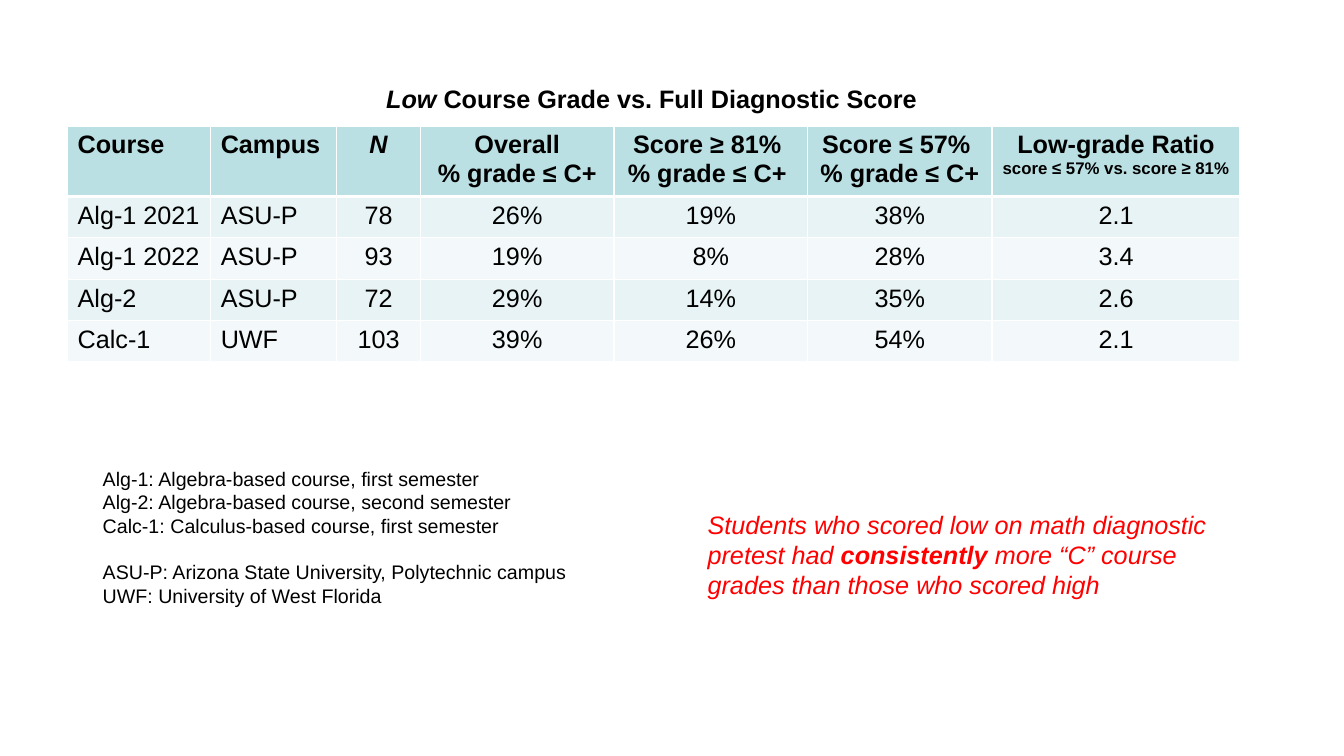
from dataclasses import dataclass

from lxml import etree
from pptx import Presentation
from pptx import util as u
from pptx.dml.color import RGBColor
from pptx.enum import text
from pptx.oxml import ns

FONT = "Arial"
BLACK = RGBColor(0x00, 0x00, 0x00)
RED = RGBColor(0xFF, 0x00, 0x00)
WHITE = RGBColor(0xFF, 0xFF, 0xFF)
HEADER_FILL = RGBColor(0xBB, 0xE0, 0xE3)
BAND_FILLS = (RGBColor(0xE7, 0xF3, 0xF4), RGBColor(0xF3, 0xF9, 0xFA))
LEFT, CENTER = text.PP_ALIGN.LEFT, text.PP_ALIGN.CENTER


@dataclass(frozen=True)
class Run:
    text: str
    bold: bool = False
    italic: bool = False
    size: float = 18


@dataclass(frozen=True)
class Column:
    header: tuple[tuple[Run, ...], ...]
    width: float
    values: tuple[str, ...]
    align: text.PP_ALIGN = CENTER


def heading(*lines: str) -> tuple[tuple[Run, ...], ...]:
    return tuple((Run(line, bold=True),) for line in lines)


COLUMNS = (
    Column(heading("Course"), 1.42, ("Alg-1 2021", "Alg-1 2022", "Alg-2", "Calc-1"), LEFT),
    Column(heading("Campus"), 1.25, ("ASU-P", "ASU-P", "ASU-P", "UWF"), LEFT),
    Column(((Run("N", bold=True, italic=True),),), 0.83, ("78", "93", "72", "103")),
    Column(heading("Overall", "% grade ≤ C+"), 1.92, ("26%", "19%", "29%", "39%")),
    Column(heading("Score ≥ 81% ", "% grade ≤ C+ "), 1.92, ("19%", "8%", "14%", "26%")),
    Column(heading("Score ≤ 57% ", "% grade ≤ C+"), 1.83, ("38%", "28%", "35%", "54%")),
    Column(
        ((Run("Low-grade Ratio", bold=True),
          Run(" score ≤ 57% vs. score ≥ 81%", bold=True, size=12)),),
        2.46, ("2.1", "3.4", "2.6", "2.1")),
)
COURSES = (
    "Alg-1: Algebra-based course, first semester",
    "Alg-2: Algebra-based course, second semester",
    "Calc-1: Calculus-based course, first semester",
)
CAMPUSES = (
    "ASU-P: Arizona State University, Polytechnic campus",
    "UWF: University of West Florida",
)
FINDING = (
    Run("Students who scored low on math diagnostic pretest had ", italic=True),
    Run("consistently", bold=True, italic=True),
    Run(" more “C” course grades than those who scored high", italic=True),
)


def write(tf, lines, *, color: RGBColor = BLACK, align: text.PP_ALIGN = LEFT) -> None:
    """Fill a text frame with one paragraph for each line of runs."""
    tf.word_wrap = True
    for i, line in enumerate(lines):
        p = tf.add_paragraph() if i else tf.paragraphs[0]
        p.alignment = align
        for run in line:
            r = p.add_run()
            r.text = run.text
            r.font.name, r.font.size = FONT, u.Pt(run.size)
            r.font.bold, r.font.italic = run.bold, run.italic
            r.font.color.rgb = color


def add_text(s, left: float, top: float, width: float, height: float, lines, **fmt):
    box = s.shapes.add_textbox(*map(u.Inches, (left, top, width, height)))
    write(box.text_frame, lines, **fmt)
    return box.text_frame


def set_borders(cell, bottom: float) -> None:
    """Draw white cell borders, 1 pt wide except for the bottom one."""
    tc_pr = cell._tc.get_or_add_tcPr()
    for side, width in (("L", 1), ("R", 1), ("T", 1), ("B", bottom)):
        ln = etree.SubElement(tc_pr, ns.qn(f"a:ln{side}"), w=str(u.Pt(width)))
        fill = etree.SubElement(ln, ns.qn("a:solidFill"))
        etree.SubElement(fill, ns.qn("a:srgbClr"), val=str(WHITE))


def format_cell(cell, lines, fill: RGBColor, align: text.PP_ALIGN, bottom: float = 1) -> None:
    set_borders(cell, bottom)
    cell.fill.solid()
    cell.fill.fore_color.rgb = fill
    write(cell.text_frame, lines, align=align)


def add_grade_table(s) -> None:
    heights = (0.7,) + (0.41,) * len(COLUMNS[0].values)
    width = sum(c.width for c in COLUMNS)
    table = s.shapes.add_table(
        len(heights), len(COLUMNS),
        *map(u.Inches, (0.67, 1.25, width, sum(heights)))).table
    for row, height in zip(table.rows, heights):
        row.height = u.Inches(height)
    for j, column in enumerate(COLUMNS):
        table.columns[j].width = u.Inches(column.width)
        format_cell(table.cell(0, j), column.header, HEADER_FILL, column.align, bottom=3)
        for i, value in enumerate(column.values):
            format_cell(table.cell(i + 1, j), ((Run(value),),), BAND_FILLS[i % 2], column.align)


def set_title(s) -> None:
    title = s.shapes.title
    title.left, title.top, title.width, title.height = map(u.Inches, (3.73, 0.78, 5.5, 0.4))
    title.text_frame.vertical_anchor = text.MSO_ANCHOR.TOP
    write(title.text_frame, ((
        Run("Low", bold=True, italic=True),
        Run(" Course Grade vs. Full Diagnostic Score", bold=True)),))


def main() -> None:
    prs = Presentation()
    prs.slide_width, prs.slide_height = u.Inches(13.33), u.Inches(7.5)
    s = prs.slides.add_slide(prs.slide_layouts.get_by_name("Title Only"))
    set_title(s)
    add_grade_table(s)
    key = add_text(s, 0.92, 4.58, 6.25, 1.5,
                   [(Run(line, size=14),) for line in COURSES + CAMPUSES])
    key.paragraphs[len(COURSES)].space_before = u.Pt(16.5)
    add_text(s, 6.92, 5, 5.17, 1.01, (FINDING,), color=RED)
    prs.save("out.pptx")


if __name__ == "__main__":
    main()
